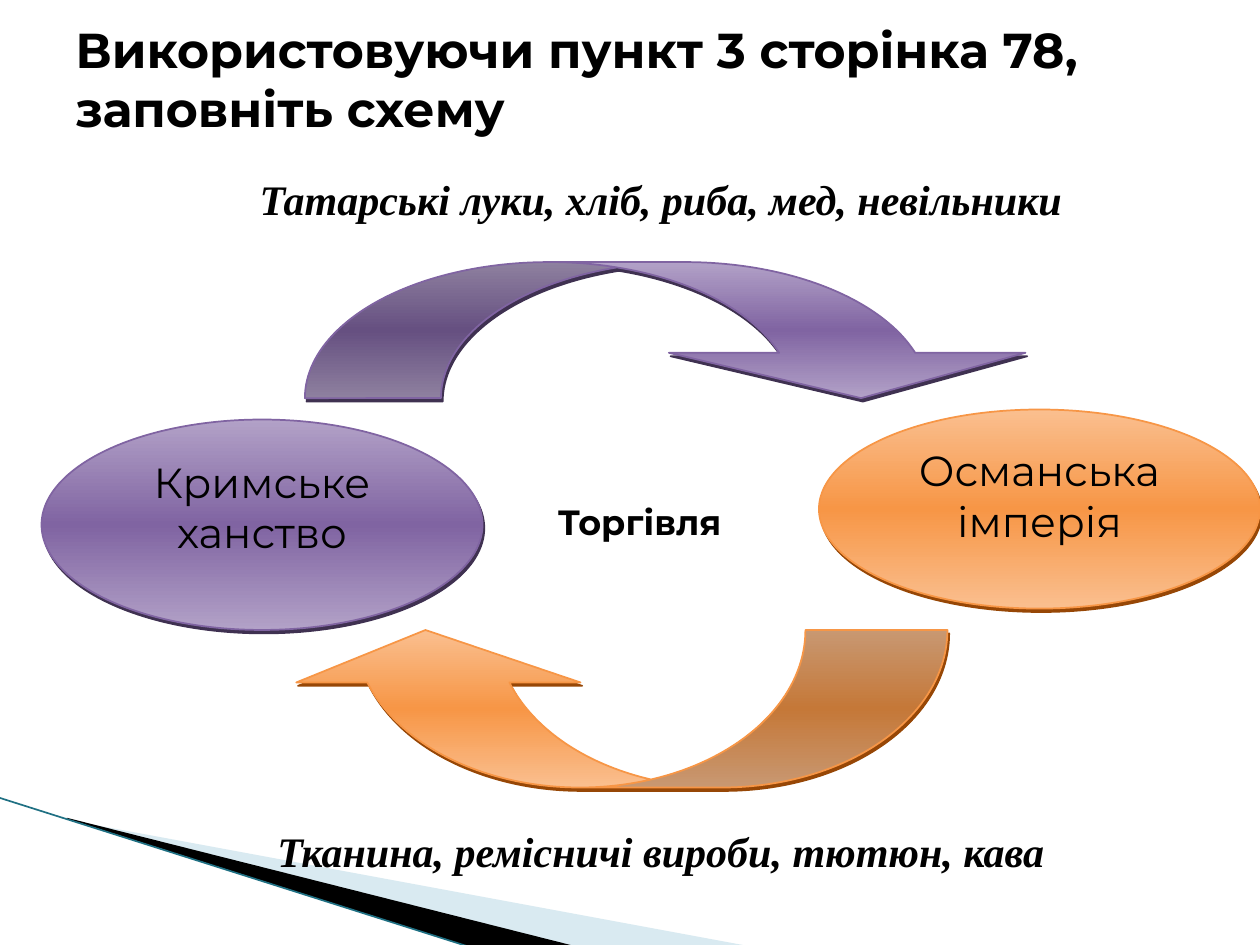
import copy
from dataclasses import dataclass

import pptx
import pptx.dml.color
import pptx.enum.shapes
import pptx.enum.text
import pptx.oxml
import pptx.oxml.ns
import pptx.util
from pptx.util import Inches

SHAPE = pptx.enum.shapes.MSO_SHAPE
ALIGN = pptx.enum.text.PP_ALIGN
ANCHOR = pptx.enum.text.MSO_ANCHOR


@dataclass(frozen=True)
class Theme:
    sans: str = "Montserrat"
    serif: str = "Times New Roman"
    title_size: int = 28
    body_size: int = 24
    label_size: int = 20
    ink: str = "000000"
    pale_blue: str = "A0CBDC"
    edge_blue: str = "1F7083"
    # Each palette: light, main, shadow
    purple: tuple = ("B2A1C7", "8064A2", "3F3151")
    orange: tuple = ("FABF8F", "F79646", "974706")


THEME = Theme()


def rgb(value):
    return pptx.dml.color.RGBColor.from_string(value)


def write_text(shape, text, size=THEME.body_size, font=THEME.sans, bold=False,
               italic=False, align=ALIGN.LEFT, anchor=ANCHOR.TOP,
               indent=0, after=0):
    frame = shape.text_frame
    frame.word_wrap = True
    frame.vertical_anchor = anchor
    para = frame.paragraphs[0]
    para.alignment = align
    para.space_after = pptx.util.Pt(after)
    if indent:
        properties = para._p.get_or_add_pPr()
        properties.set("marL", "0")
        properties.set("indent", str(Inches(indent)))
    span = para.add_run()
    span.text = text
    span.font.name = font
    span.font.size = pptx.util.Pt(size)
    span.font.bold = bold
    span.font.italic = italic
    span.font.color.rgb = rgb(THEME.ink)


def add_text(page, box, text, **style):
    shape = page.shapes.add_textbox(*map(Inches, box))
    write_text(shape, text, **style)


def add_effects(shape, content=""):
    namespace = pptx.oxml.ns.nsdecls("a")
    shape._element.spPr.append(pptx.oxml.parse_xml(
        f"<a:effectLst {namespace}>{content}</a:effectLst>"))


def add_glossy(page, kind, box, palette, adjustments=(), flip=False):
    """Preset shape with a light-main-light gradient and a hard shadow."""
    light, main, dark = palette
    shape = page.shapes.add_shape(kind, *map(Inches, box))
    for index, value in enumerate(adjustments):
        shape.adjustments[index] = value
    if flip:
        shape._element.spPr.xfrm.set("flipH", "1")
    shape.fill.gradient()
    shape.fill.gradient_angle = 270
    first = shape._element.spPr.find(".//" + pptx.oxml.ns.qn("a:gs"))
    first.addnext(copy.deepcopy(first))
    stops = shape.fill.gradient_stops
    for stop, position, color in zip(stops, (0, 0.5, 1), (light, main, light)):
        stop.position = position
        stop.color.rgb = rgb(color)
    shape.line.color.rgb = rgb(main)
    shape.line.width = pptx.util.Pt(1)
    distance, angle = pptx.util.Pt(2.2), 63 * 60000
    add_effects(shape, f'<a:outerShdw blurRad="0" dist="{distance}" dir="{angle}" '
                       f'algn="ctr" rotWithShape="0"><a:srgbClr val="{dark}"/>'
                       '</a:outerShdw>')
    return shape


def add_polygon(page, points, color, opacity=100):
    corners = [(Inches(x), Inches(y)) for x, y in points]
    builder = page.shapes.build_freeform(*corners[0])
    builder.add_line_segments(corners[1:], close=True)
    shape = builder.convert_to_shape()
    shape.shadow.inherit = False
    shape.line.fill.background()
    shape.fill.solid()
    shape.fill.fore_color.rgb = rgb(color)
    if opacity < 100:
        tone = shape._element.spPr.find(".//" + pptx.oxml.ns.qn("a:srgbClr"))
        tone.append(pptx.oxml.parse_xml(
            f'<a:alpha {pptx.oxml.ns.nsdecls("a")} val="{opacity * 1000}"/>'))


def add_corner(page, box):
    """Sweeping wedges in the lower left corner."""
    left, top, width, height = box
    bottom = top + height

    add_polygon(page, [(left + 0.55, top + 0.18), (left + width, bottom),
                       (left + 4.56, bottom), (left + 0.55, top + 0.17)],
                THEME.pale_blue, opacity=40)
    add_polygon(page, [(left + 0.53, top + 0.16), (left + 4.57, bottom),
                       (left + 3.72, bottom), (left + 0.54, top + 0.17)],
                THEME.ink)
    edge = page.shapes.add_connector(
        pptx.enum.shapes.MSO_CONNECTOR.STRAIGHT,
        *map(Inches, (left - 0.01, top, left + 3.71, bottom)))
    edge.line.color.rgb = rgb(THEME.edge_blue)
    edge.line.width = pptx.util.Pt(0.95)
    add_effects(edge)


def add_state(page, box, name, palette):
    oval = add_glossy(page, SHAPE.OVAL, box, palette)
    write_text(oval, name, align=ALIGN.CENTER, after=10)


def add_goods(page, box, goods):
    add_text(page, box, goods, font=THEME.serif, bold=True, italic=True,
             align=ALIGN.CENTER, anchor=ANCHOR.MIDDLE, indent=0.49)


def add_trade_cycle(page, box):
    """Two states, the arrows between them and the goods they exchange."""
    left, top, width, height = box
    add_state(page, (left + 0.33, top + 2, 3.5, 1.67),
              "Кримське ханство", THEME.purple)
    add_state(page, (left + width - 3.5, top + 1.92, 3.5, 1.58),
              "Османська імперія", THEME.orange)
    add_glossy(page, SHAPE.CURVED_UP_ARROW, (left + 2.25, top + 3.67, 5.27, 1.25),
               THEME.orange, (0.902, 1.804, 0.333), flip=True)
    add_glossy(page, SHAPE.CURVED_DOWN_ARROW, (left + 2.42, top + 0.75, 5.83, 1.08),
               THEME.purple, (1.31, 2.621, 0.333))
    add_goods(page, (left, top, width, 0.5),
              "Татарські луки, хліб, риба, мед, невільники")
    add_goods(page, (left, top + height - 0.5, width, 0.5),
              "Тканина, ремісничі вироби, тютюн, кава")
    add_text(page, (left + 4.33, top + 2.59, 1.56, 0.44), "Торгівля",
             size=THEME.label_size, bold=True)


def main():
    deck = pptx.Presentation()
    deck.slide_width, deck.slide_height = Inches(10), Inches(7.5)
    page = deck.slides.add_slide(deck.slide_layouts[6])
    add_corner(page, (0, 6.33, 5.95, 1.18))
    add_text(page, (0.5, 0, 9, 1.25),
             "Використовуючи пункт 3 сторінка 78, заповніть схему",
             size=THEME.title_size, bold=True, anchor=ANCHOR.MIDDLE)
    add_trade_cycle(page, (0, 1.33, 10, 5.67))
    deck.save("out.pptx")


if __name__ == "__main__":
    main()
